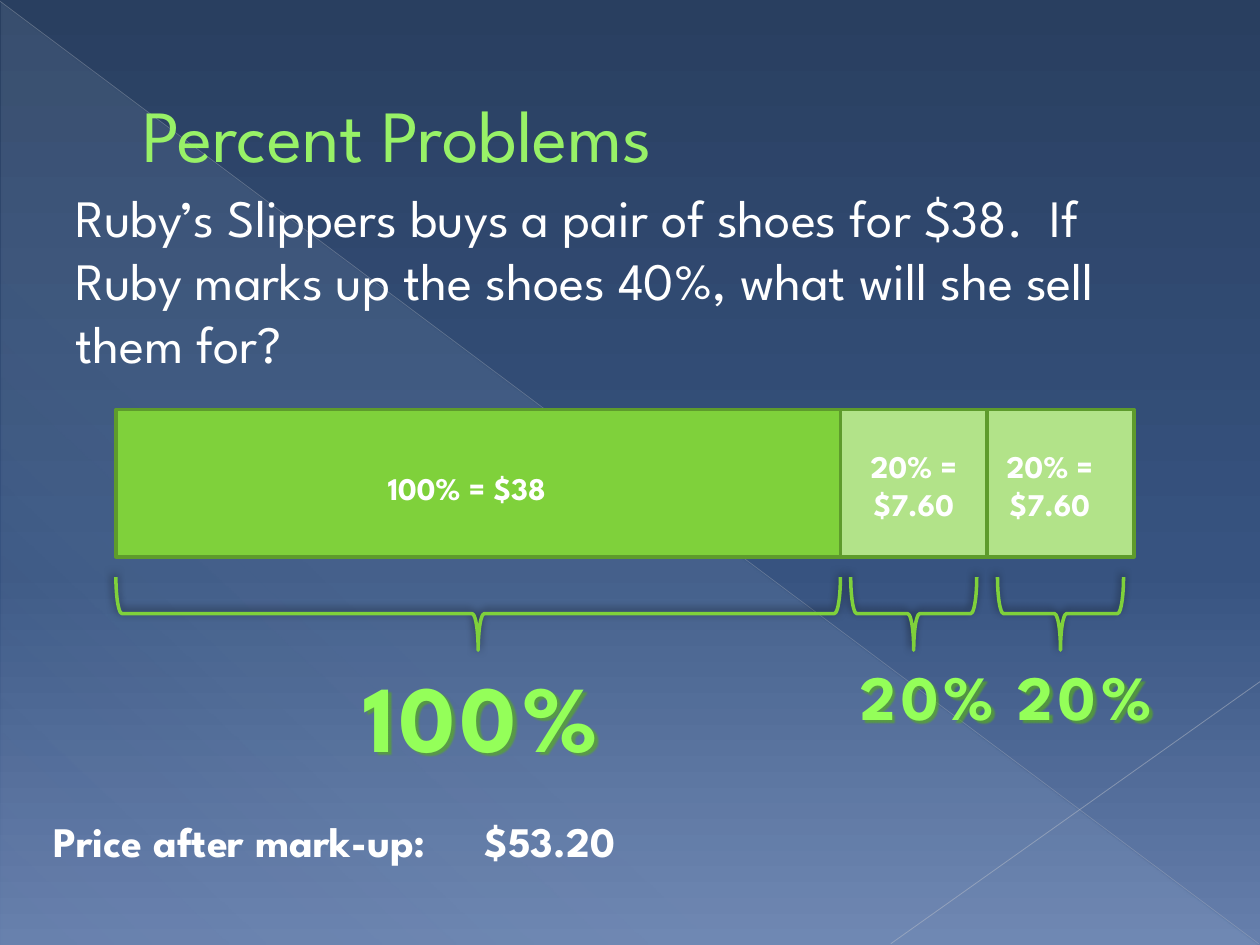
from pptx import Presentation, util as u
from pptx.dml.color import RGBColor
from pptx.enum import shapes, text
from pptx.oxml import parse_xml
from pptx.oxml.ns import nsdecls, qn

FONT = "League Spartan"
WHITE = RGBColor(0xFF, 0xFF, 0xFF)
TITLE_GREEN = RGBColor(0x98, 0xF1, 0x67)
TITLE_EDGE = RGBColor(0x58, 0x91, 0x29)
GREEN = RGBColor(0x7F, 0xD1, 0x3B)
PALE_GREEN = RGBColor(0xB2, 0xE3, 0x89)
BAR_EDGE = RGBColor(0x5E, 0x9B, 0x2C)
LABEL_TOP = RGBColor(0x94, 0xFF, 0x59)
LABEL_BOTTOM = RGBColor(0x5B, 0xB6, 0x10)
LABEL_EDGE = RGBColor(0xF6, 0xFB, 0xF4)
BLACK = RGBColor(0, 0, 0)
SHEEN = RGBColor(0xD6, 0xEC, 0xFF)
NIGHT, NAVY, HAZE = (RGBColor(0x29, 0x3F, 0x60), RGBColor(0x37, 0x53, 0x80),
                     RGBColor(0x66, 0x7F, 0xAC))
RAY, CROSS_RAY = RGBColor(0xB7, 0xBC, 0xC5), RGBColor(0xBF, 0xC3, 0xCB)

# Tape diagram: left edge, top, height, and the width of each part
BAR_LEFT, BAR_TOP, BAR_H = 0.92, 3.25, 1.17
WHOLE_W, PART_W = 5.75, 1.165
BRACE_TOP, BRACE_H = 4.58, 0.58


def xml(body):
    return parse_xml(f'<a:root {nsdecls("a")}>{body}</a:root>')[0]


def color_xml(color, alpha=100):
    return (f'<a:srgbClr val="{color}"><a:alpha val="{alpha * 1000}"/>'
            '</a:srgbClr>')


def gradient(stops, angle):
    """Gradient fill from (position, colour, opacity) stops."""
    gs = "".join(f'<a:gs pos="{pos * 1000}">{color_xml(c, a)}</a:gs>'
                 for pos, c, a in stops)
    return xml(f'<a:gradFill rotWithShape="1"><a:gsLst>{gs}</a:gsLst>'
               f'<a:lin ang="{angle * 60000}" scaled="0"/></a:gradFill>')


def add_shadow(sp, color, alpha, blur, dist, angle):
    sp.shadow.inherit = False
    effects = sp.element.spPr.find(qn("a:effectLst"))
    effects.append(xml(
        f'<a:outerShdw blurRad="{u.Pt(blur)}" dist="{u.Pt(dist)}" '
        f'dir="{angle * 60000}" algn="tl" rotWithShape="0">'
        f'{color_xml(color, alpha)}</a:outerShdw>'))


def format_run(r, color, **fmt):
    for name, value in {"name": FONT, **fmt}.items():
        setattr(r.font, name, value)
    r.font.color.rgb = color


def outline_run(r, color, width):
    r.font._element.insert(0, xml(
        f'<a:ln w="{u.Pt(width)}"><a:solidFill>{color_xml(color)}'
        '</a:solidFill></a:ln>'))


def add_text(s, words, box, size, color=WHITE, bold=True, align=None):
    sp = s.shapes.add_textbox(*map(u.Inches, box))
    sp.text_frame.word_wrap = True
    p = sp.text_frame.paragraphs[0]
    p.alignment = align
    r = p.add_run()
    r.text = words
    format_run(r, color, size=u.Pt(size), bold=bold)
    return sp


def add_label(s, words, box, size):
    """Large percent label with gradient letters."""
    sp = add_text(s, words, box, size, LABEL_TOP,
                  align=text.PP_ALIGN.CENTER)
    r = sp.text_frame.paragraphs[0].runs[0]
    rpr = r.font._element
    rpr.set("spc", "300")
    rpr.replace(rpr.find(qn("a:solidFill")),
                gradient([(10, LABEL_TOP, 100), (75, LABEL_BOTTOM, 100)], 90))
    outline_run(r, LABEL_EDGE, 0.9)
    add_shadow(sp, LABEL_BOTTOM, 60, 1, 2, 45)


def add_bar(s, left, width, color):
    sp = s.shapes.add_shape(shapes.MSO_SHAPE.RECTANGLE, *map(
        u.Inches, (left, BAR_TOP, width, BAR_H)))
    sp.shadow.inherit = False
    sp.fill.solid()
    sp.fill.fore_color.rgb = color
    sp.line.color.rgb, sp.line.width = BAR_EDGE, u.Pt(2)


def add_brace(s, center, width):
    """Brace opening upward: a left brace turned by 270 degrees."""
    top = BRACE_TOP + (BRACE_H - width) / 2
    sp = s.shapes.add_shape(shapes.MSO_SHAPE.LEFT_BRACE, *map(
        u.Inches, (center - BRACE_H / 2, top, BRACE_H, width)))
    sp.rotation = 270
    sp.fill.background()
    sp.line.color.rgb, sp.line.width = GREEN, u.Pt(2)
    add_shadow(sp, BLACK, 50, 5, 2, 245)


def add_ray(s, start, end, color, width, alpha):
    c = s.shapes.add_connector(shapes.MSO_CONNECTOR.STRAIGHT,
                               *map(u.Inches, start + end))
    c.line.color.rgb, c.line.width = color, u.Pt(width)
    clr = c.element.spPr.find(".//" + qn("a:srgbClr"))
    clr.append(xml(f'<a:alpha val="{alpha * 1000}"/>'))
    c.element.spPr.append(xml("<a:effectLst/>"))


def add_backdrop(s):
    s.background.fill.solid()
    bg = s.element.find(".//" + qn("p:bgPr"))
    bg.replace(bg.find(qn("a:solidFill")), gradient(
        [(0, NIGHT, 100), (60, NAVY, 100), (100, HAZE, 100)], 90))
    sp = s.shapes.add_shape(shapes.MSO_SHAPE.RIGHT_TRIANGLE, *map(
        u.Inches, (0.01, 0.02, 9.98, 7.48)))
    sp.shadow.inherit = False
    sp.line.fill.background()
    sp.fill.solid()
    spPr = sp.element.spPr
    spPr.replace(spPr.find(qn("a:solidFill")), gradient(
        [(0, SHEEN, 10), (70, SHEEN, 8), (100, SHEEN, 1)], 133))
    add_ray(s, (0, 0.01), (9.99, 7.49), RAY, 0.39, 35)
    add_ray(s, (10, 5.41), (7.07, 7.49), CROSS_RAY, 0.47, 45)


def add_title(s, words):
    sp = s.shapes.title
    sp.left, sp.top, sp.width, sp.height = map(u.Inches, (0.5, 0.29, 9, 1.53))
    tf = sp.text_frame
    tf.vertical_anchor = text.MSO_ANCHOR.MIDDLE
    p = tf.paragraphs[0]
    p.alignment = text.PP_ALIGN.LEFT
    p._p.get_or_add_pPr().set("marL", str(u.Inches(0.53)))
    r = p.add_run()
    r.text = words
    format_run(r, TITLE_GREEN, size=u.Pt(42))
    outline_run(r, TITLE_EDGE, 0.5)
    s.shapes._spTree.append(sp.element)  # in front of the backdrop


def main():
    prs = Presentation()
    prs.slide_width, prs.slide_height = u.Inches(10), u.Inches(7.5)
    s = prs.slides.add_slide(prs.slide_layouts[5])
    center = text.PP_ALIGN.CENTER

    # Backdrop, title and question
    add_backdrop(s)
    add_title(s, "Percent Problems")
    body = add_text(s, "Ruby’s Slippers buys a pair of shoes for $38.  If Ruby "
                    "marks up the shoes 40%, what will she sell them for?",
                    (0.5, 1.42, 9, 1.7), 30, bold=False)
    body.text_frame.paragraphs[0].space_before = u.Pt(6)

    # Whole price: bar, brace and labels
    add_bar(s, BAR_LEFT, WHOLE_W, GREEN)
    add_text(s, "100% = $38", (1.58, 3.67, 4.25, 0.4), 18, align=center)
    add_brace(s, BAR_LEFT + WHOLE_W / 2, WHOLE_W)
    add_label(s, "100%", (2.67, 5.17, 2.29, 1.01), 54)

    # The two 20% parts of the mark-up
    for i, (text_left, label_left) in enumerate([(6.67, 6.58), (7.75, 7.83)]):
        left = BAR_LEFT + WHOLE_W + i * PART_W
        add_bar(s, left, PART_W, PALE_GREEN)
        add_text(s, "20% = $7.60", (text_left, 3.5, PART_W, 0.71), 18,
                 align=center)
        add_brace(s, left + PART_W / 2, 1)
        add_label(s, "20%", (label_left, 5.17, 1.56, 0.71), 36)

    # Answer
    add_text(s, "Price after mark-up:", (0.33, 6.42, 6, 0.5), 24)
    add_text(s, "$53.20", (3.75, 6.42, 1.58, 0.5), 24)

    prs.save("out.pptx")


if __name__ == "__main__":
    main()
